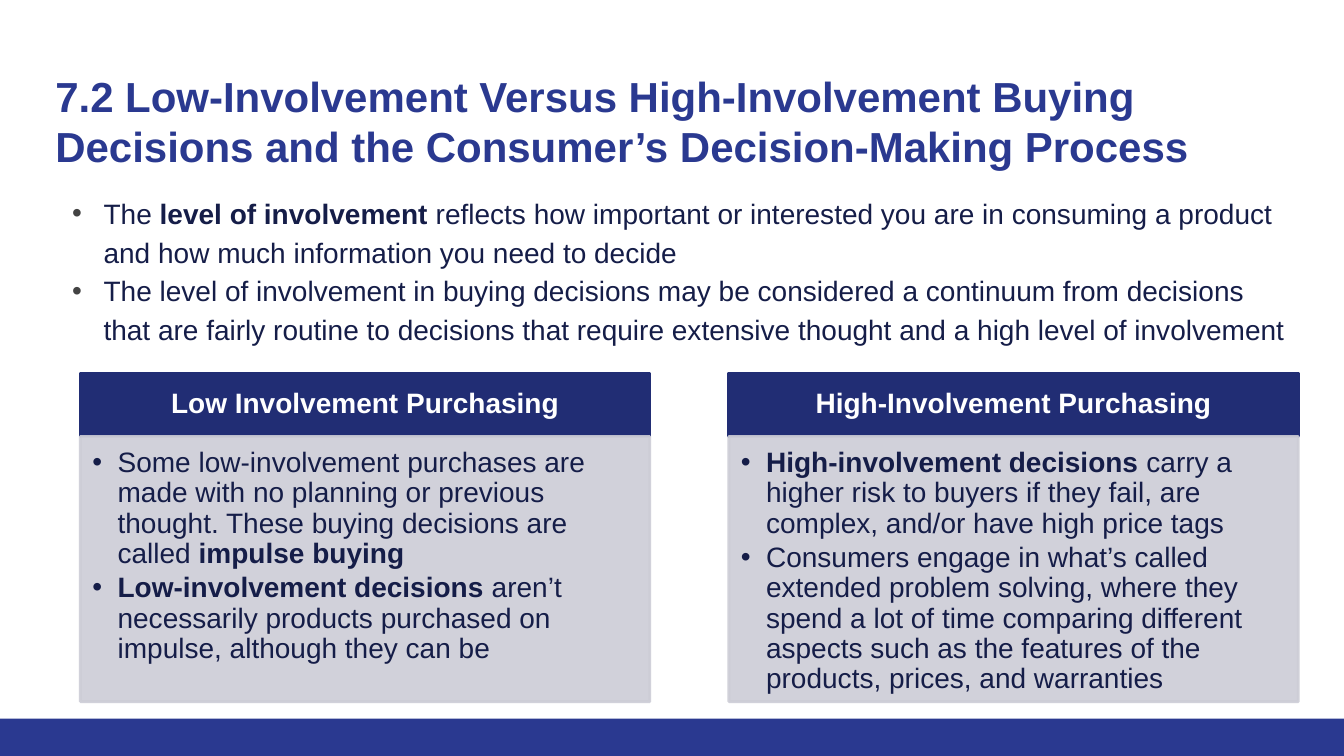
from dataclasses import dataclass

from lxml import etree
from pptx import Presentation
from pptx.dml import color
from pptx.enum import shapes, text
from pptx.oxml import ns
from pptx.util import Pt


@dataclass(frozen=True)
class Theme:
    font: str = "Arial"
    title_size: float = 30
    body_size: float = 20
    brand: str = "2A3990"
    header: str = "212D74"
    panel: str = "CDCDD6"
    ink: str = "151D48"
    bullet: str = "434343"
    white: str = "FFFFFF"


@dataclass(frozen=True)
class Span:
    words: str
    bold: bool = False


@dataclass(frozen=True)
class Style:
    size: float
    colour: str
    line: float = 1.0
    after: float = 0
    centred: bool = False
    indent: float = 0  # hanging bullet indent; 0 means no bullet
    margin: float = 0
    bullet: str = ""


@dataclass(frozen=True)
class Card:
    heading: str
    points: list[list[Span]]


THEME = Theme()
SLIDE_W, SLIDE_H = 960, 540
TEXT_LEFT, TEXT_W = 32.4, 894.2
CARD_LEFT, CARD_TOP, CARD_W, CARD_STEP = 57.4, 266.4, 406.8, 463.2
HEADER_H, PANEL_H = 45.4, 189.4

TITLE = Style(THEME.title_size, THEME.brand)
INTRO = Style(THEME.body_size, THEME.ink, 1.15, indent=22.5, margin=34.5, bullet=THEME.bullet)
HEADING = Style(THEME.body_size, THEME.white, 0.9, centred=True)
POINT = Style(THEME.body_size, THEME.ink, 0.9, 3, indent=18, margin=18, bullet=THEME.ink)

INTRO_POINTS = [
    [Span("The "), Span("level of involvement ", True),
     Span("reflects how important or interested you are in consuming a product "
          "and how much information you need to decide")],
    [Span("The level of involvement in buying decisions may be considered a continuum "
          "from decisions that are fairly routine to decisions that require extensive "
          "thought and a high level of involvement")],
]
CARDS = [
    Card("Low Involvement Purchasing", [
        [Span("Some low-involvement purchases are made with no planning or previous "
              "thought. These buying decisions are called "), Span("impulse buying", True)],
        [Span("Low-involvement decisions ", True),
         Span("aren’t necessarily products purchased on impulse, although they can be")],
    ]),
    Card("High-Involvement Purchasing", [
        [Span("High-involvement decisions ", True),
         Span("carry a higher risk to buyers if they fail, are complex, "
              "and/or have high price tags")],
        [Span("Consumers engage in what’s called extended problem solving, where they "
              "spend a lot of time comparing different aspects such as the features of "
              "the products, prices, and warranties")],
    ]),
]


def add_bullet(para, style: Style) -> None:
    props = para._p.get_or_add_pPr()
    props.set("marL", str(Pt(style.margin)))
    props.set("indent", str(-Pt(style.indent)))
    tint = etree.SubElement(props, ns.qn("a:buClr"))
    etree.SubElement(tint, ns.qn("a:srgbClr"), val=style.bullet)
    etree.SubElement(props, ns.qn("a:buFont"), typeface=THEME.font)
    etree.SubElement(props, ns.qn("a:buChar"), char="•")


def write(box, paragraphs: list[list[Span]], style: Style,
          insets: tuple[float, float, float, float], middle: bool = False) -> None:
    """Fill a shape with styled paragraphs; insets run left, top, right, bottom."""
    frame = box.text_frame
    frame.word_wrap = True
    frame.auto_size = text.MSO_AUTO_SIZE.NONE
    frame.vertical_anchor = text.MSO_ANCHOR.MIDDLE if middle else text.MSO_ANCHOR.TOP
    frame.margin_left, frame.margin_top, frame.margin_right, frame.margin_bottom = map(Pt, insets)
    for index, spans in enumerate(paragraphs):
        para = frame.add_paragraph() if index else frame.paragraphs[0]
        if style.indent:
            add_bullet(para, style)
        para.alignment = text.PP_ALIGN.CENTER if style.centred else text.PP_ALIGN.LEFT
        para.line_spacing = style.line
        para.space_after = Pt(style.after)
        for span in spans:
            run = para.add_run()
            run.text = span.words
            run.font.name = THEME.font
            run.font.size = Pt(style.size)
            run.font.bold = span.bold
            run.font.color.rgb = color.RGBColor.from_string(style.colour)


def add_text(page, left: float, top: float, width: float, height: float):
    return page.shapes.add_textbox(Pt(left), Pt(top), Pt(width), Pt(height))


def add_block(page, left: float, top: float, width: float, height: float,
              colour: str, outline: float = 0, opacity: int = 100):
    block = page.shapes.add_shape(
        shapes.MSO_SHAPE.RECTANGLE, Pt(left), Pt(top), Pt(width), Pt(height))
    block.shadow.inherit = False
    block.fill.solid()
    block.fill.fore_color.rgb = color.RGBColor.from_string(colour)
    if outline:
        block.line.width = Pt(outline)
        block.line.color.rgb = color.RGBColor.from_string(colour)
    else:
        block.line.fill.background()
    if opacity < 100:
        for tint in block._element.spPr.iter(ns.qn("a:srgbClr")):
            etree.SubElement(tint, ns.qn("a:alpha"), val=str(opacity * 1000))
    return block


def add_card(page, card: Card, left: float) -> None:
    header = add_block(page, left, CARD_TOP, CARD_W, HEADER_H, THEME.header, 2)
    write(header, [[Span(card.heading, True)]], HEADING, (11.5, 6.5, 11.5, 6.5), middle=True)
    panel = add_block(page, left, CARD_TOP + HEADER_H, CARD_W, PANEL_H, THEME.panel, 2, 90)
    write(panel, card.points, POINT, (8.6, 8.6, 11.5, 12.2))


def main() -> None:
    deck = Presentation()
    deck.slide_width, deck.slide_height = Pt(SLIDE_W), Pt(SLIDE_H)
    page = deck.slides.add_slide(deck.slide_layouts[6])
    add_block(page, 0, 513.4, SLIDE_W, SLIDE_H - 513.4, THEME.brand)
    title = add_text(page, TEXT_LEFT, 43.2, TEXT_W, 64)
    write(title, [[Span("7.2 Low-Involvement Versus High-Involvement Buying Decisions "
                        "and the Consumer’s Decision-Making Process", True)]],
          TITLE, (7.2, 7.2, 7.2, 7.2))
    intro = add_text(page, TEXT_LEFT, 129.6, TEXT_W, 130)
    write(intro, INTRO_POINTS, INTRO, (7.2, 7.2, 7.2, 7.2))
    for index, card in enumerate(CARDS):
        add_card(page, card, CARD_LEFT + index * CARD_STEP)
    deck.save("out.pptx")


if __name__ == "__main__":
    main()
